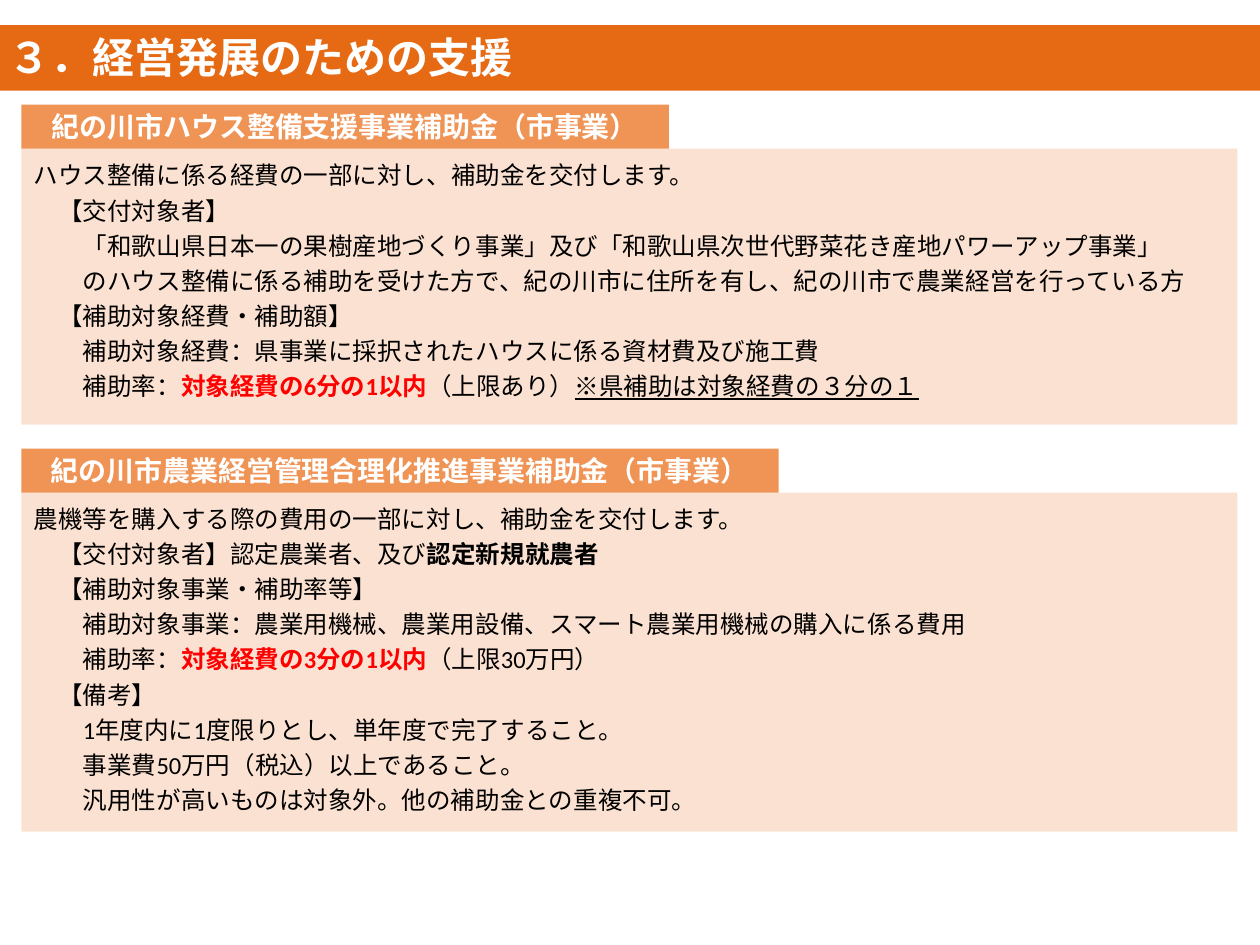
"""Build the slide on subsidies that support farm business growth."""
from lxml.etree import SubElement
from pptx import Presentation
from pptx.dml.color import RGBColor
from pptx.enum.shapes import MSO_SHAPE as Shape
from pptx.enum.text import MSO_ANCHOR as Anchor, PP_ALIGN as Align
from pptx.oxml.ns import qn
from pptx.util import Inches, Pt

FONT = "Calibri"
BAND, HEADING, PANEL = "E66914", "F09456", "F8CBAD"
WHITE, BLACK, RED = "FFFFFF", "000000", "FF0000"
PANEL_ALPHA = 56
LEFT, PANEL_WIDTH, DETAIL_WIDTH, HEADING_HEIGHT = 0.17, 9.65, 9.61, 0.35
BODY_SIZE, LINE_PITCH = 14, 20

PLAIN = {}
BOLD = {"bold": True}
KEY = {"bold": True, "color": RED}
UNDERLINED = {"underline": True}

TITLE = "３．経営発展のための支援"
PROGRAMS = [
    {
        "heading": "紀の川市ハウス整備支援事業補助金（市事業）",
        "top": 0.83, "heading_width": 5.14, "panel_height": 2.19, "detail_height": 2.08,
        "details": [
            (0, [("ハウス整備に係る経費の一部に対し、補助金を交付します。", PLAIN)]),
            (1, [("【交付対象者】", PLAIN)]),
            (2, [("「和歌山県日本一の果樹産地づくり事業」及び「和歌山県次世代野菜花き産地パワーアップ事業」", PLAIN)]),
            (2, [("のハウス整備に係る補助を受けた方で、紀の川市に住所を有し、紀の川市で農業経営を行っている方", PLAIN)]),
            (1, [("【補助対象経費・補助額】", PLAIN)]),
            (2, [("補助対象経費：県事業に採択されたハウスに係る資材費及び施工費", PLAIN)]),
            (2, [("補助率：", PLAIN), ("対象経費の6分の1以内", KEY), ("（上限あり）", PLAIN),
                 ("※県補助は対象経費の３分の１", UNDERLINED)]),
        ],
    },
    {
        "heading": "紀の川市農業経営管理合理化推進事業補助金（市事業）",
        "top": 3.56, "heading_width": 6.01, "panel_height": 2.69, "detail_height": 2.57,
        "details": [
            (0, [("農機等を購入する際の費用の一部に対し、補助金を交付します。", PLAIN)]),
            (1, [("【交付対象者】認定農業者、及び", PLAIN), ("認定新規就農者", BOLD)]),
            (1, [("【補助対象事業・補助率等】", PLAIN)]),
            (2, [("補助対象事業：農業用機械、農業用設備、スマート農業用機械の購入に係る費用", PLAIN)]),
            (2, [("補助率：", PLAIN), ("対象経費の3分の1以内", KEY), ("（上限30万円）", PLAIN)]),
            (1, [("【備考】", PLAIN)]),
            (2, [("1年度内に1度限りとし、単年度で完了すること。", PLAIN)]),
            (2, [("事業費50万円（税込）以上であること。", PLAIN)]),
            (2, [("汎用性が高いものは対象外。他の補助金との重複不可。", PLAIN)]),
        ],
    },
]


def rgb(value):
    return RGBColor.from_string(value)


def add_rectangle(slide, box, color, alpha=None):
    rectangle = slide.shapes.add_shape(Shape.RECTANGLE, *map(Inches, box))
    rectangle.shadow.inherit = False
    rectangle.line.fill.background()
    rectangle.fill.solid()
    rectangle.fill.fore_color.rgb = rgb(color)
    if alpha is not None:
        tint = rectangle.fill._xPr.find(".//" + qn("a:srgbClr"))
        SubElement(tint, qn("a:alpha")).set("val", str(alpha * 1000))
    return rectangle


def format_run(run, size, color=BLACK, bold=False, underline=False):
    run.font.name, run.font.size = FONT, Pt(size)
    run.font.bold, run.font.underline = bold, underline
    run.font.color.rgb = rgb(color)


def add_title(slide):
    add_rectangle(slide, (0, 0.2, 10, 0.52), BAND)
    frame = slide.shapes.add_textbox(*map(Inches, (0, 0.21, 4.69, 0.53))).text_frame
    frame.word_wrap = True
    frame.vertical_anchor = Anchor.MIDDLE
    frame.margin_left = frame.margin_right = Inches(0.07)
    frame.margin_top = frame.margin_bottom = Inches(0.04)
    frame.text = TITLE
    frame.paragraphs[0].line_spacing = 0.9
    format_run(frame.paragraphs[0].runs[0], 24, WHITE, bold=True)


def add_heading(slide, text, top, width):
    heading = add_rectangle(slide, (LEFT, top, width, HEADING_HEIGHT), HEADING)
    frame = heading.text_frame
    frame.vertical_anchor = Anchor.MIDDLE
    frame.text = text
    frame.paragraphs[0].alignment = Align.CENTER
    format_run(frame.paragraphs[0].runs[0], 16, WHITE, bold=True)


def add_details(slide, details, top, height):
    box = (LEFT, top, DETAIL_WIDTH, height)
    frame = slide.shapes.add_textbox(*map(Inches, box)).text_frame
    frame.word_wrap = True
    for index, (depth, parts) in enumerate(details):
        paragraph = frame.add_paragraph() if index else frame.paragraphs[0]
        paragraph.line_spacing = Pt(LINE_PITCH)
        paragraph._p.get_or_add_pPr().set("marL", str(Pt(BODY_SIZE * depth)))
        for text, style in parts:
            run = paragraph.add_run()
            run.text = text
            format_run(run, BODY_SIZE, **style)


def add_program(slide, program):
    panel_top = program["top"] + HEADING_HEIGHT
    add_rectangle(slide, (LEFT, panel_top, PANEL_WIDTH, program["panel_height"]), PANEL, PANEL_ALPHA)
    add_heading(slide, program["heading"], program["top"], program["heading_width"])
    add_details(slide, program["details"], panel_top, program["detail_height"])


def main():
    deck = Presentation()
    deck.slide_width, deck.slide_height = Inches(10), Inches(7.5)
    slide = deck.slides.add_slide(deck.slide_layouts[6])
    add_title(slide)
    for program in PROGRAMS:
        add_program(slide, program)
    deck.save("out.pptx")


if __name__ == "__main__":
    main()
